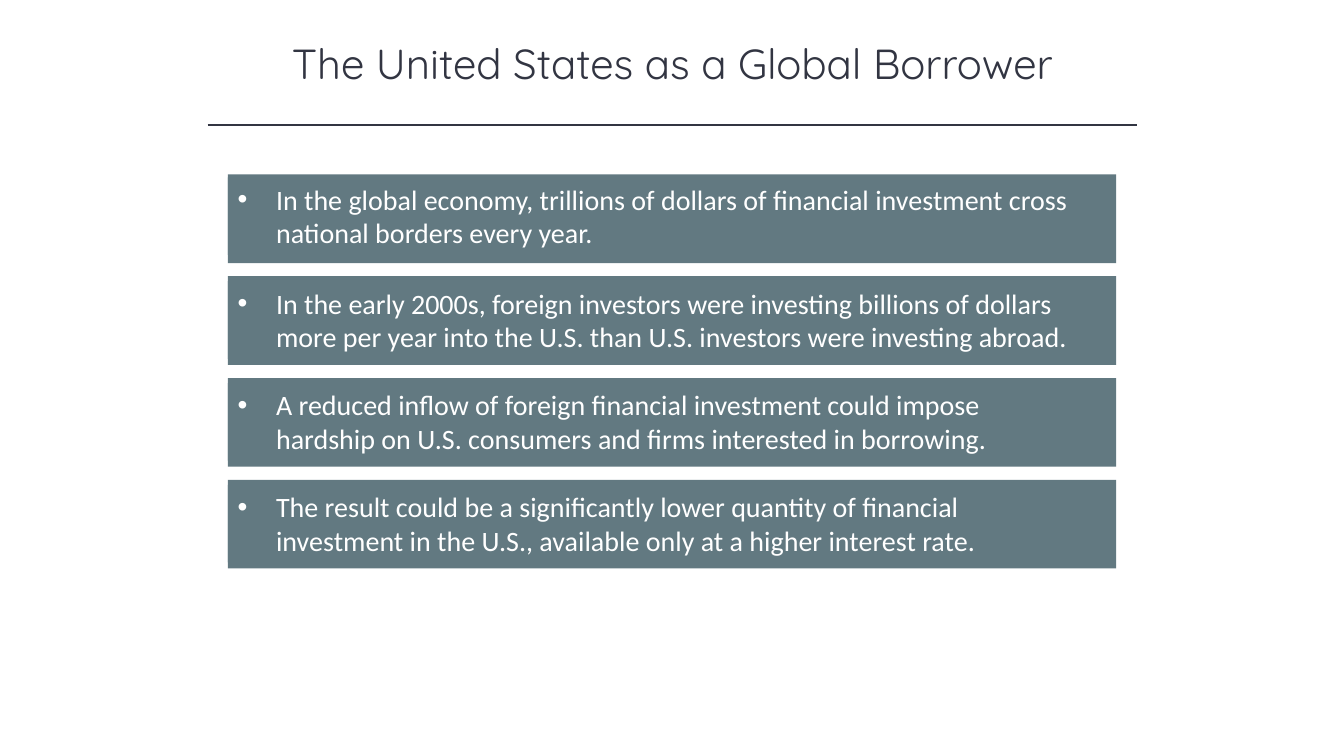
from lxml import etree
from pptx import Presentation
from pptx import util as u
from pptx.dml.color import RGBColor
from pptx.enum import shapes, text
from pptx.oxml.ns import qn

INK = RGBColor(0x32, 0x35, 0x42)
SLATE = RGBColor(0x62, 0x79, 0x81)
WHITE = RGBColor(0xFF, 0xFF, 0xFF)

POINTS = [
    ("In the global economy, trillions of dollars of financial investment "
     "cross national borders every year.", 0.03),
    ("In the early 2000s, foreign investors were investing billions of dollars "
     "more per year into the U.S. than U.S. investors were investing abroad.", 0.05),
    ("A reduced inflow of foreign financial investment could impose hardship "
     "on U.S. consumers and firms interested in borrowing.", 0.05),
    ("The result could be a significantly lower quantity of financial investment "
     "in the U.S., available only at a higher interest rate.", 0.05),
]


def write(frame, wording, font_name, size, color, align):
    frame.word_wrap = True
    frame.auto_size = text.MSO_AUTO_SIZE.SHAPE_TO_FIT_TEXT
    frame.vertical_anchor = text.MSO_ANCHOR.TOP
    paragraph = frame.paragraphs[0]
    paragraph.text = wording
    paragraph.alignment = align
    paragraph.font.name = font_name
    paragraph.font.size = u.Pt(size)
    paragraph.font.color.rgb = color
    return paragraph


def add_bullet(paragraph, indent):
    properties = paragraph._p.get_or_add_pPr()
    properties.set("marL", str(u.Inches(indent)))
    properties.set("indent", str(-u.Inches(indent)))
    etree.SubElement(properties, qn("a:buFont")).set("typeface", "Arial")
    etree.SubElement(properties, qn("a:buChar")).set("char", "•")


def add_block(group, left, top, width, height):
    block = group.shapes.add_shape(
        shapes.MSO_SHAPE.RECTANGLE, *map(u.Inches, (left, top, width, height)))
    block.shadow.inherit = False
    block.fill.solid()
    block.fill.fore_color.rgb = SLATE
    block.line.fill.background()
    return block


def add_heading(slide, left, top, width, height):
    heading = slide.shapes.add_textbox(*map(u.Inches, (left, top, width, 0.61)))
    write(heading.text_frame, "The United States as a Global Borrower",
          "Quicksand", 30, INK, text.PP_ALIGN.CENTER)
    inset, rule_y = 0.39, top + height
    rule = slide.shapes.add_connector(
        shapes.MSO_CONNECTOR.STRAIGHT,
        *map(u.Inches, (left + inset, rule_y, left + width - inset, rule_y)))
    rule.line.color.rgb = INK
    rule.line.width = u.Pt(1)
    etree.SubElement(rule._element.spPr, qn("a:effectLst"))


def add_points(slide, left, top, width, height, gap=0.13):
    panel_height = (height - gap * (len(POINTS) - 1)) / len(POINTS)
    for row, (wording, drop) in enumerate(POINTS):
        panel_top = top + row * (panel_height + gap)
        group = slide.shapes.add_group_shape()
        add_block(group, left, panel_top, width, panel_height)
        statement = add_block(group, left, panel_top + drop, width - 0.27, 0.77)
        paragraph = write(statement.text_frame, wording, "Calibri", 20, WHITE,
                          text.PP_ALIGN.LEFT)
        add_bullet(paragraph, 0.38)


def main():
    deck = Presentation()
    deck.slide_width, deck.slide_height = u.Inches(13.33), u.Inches(7.5)
    slide = deck.slides.add_slide(deck.slide_layouts[6])
    add_heading(slide, 1.67, 0.32, 10, 0.92)
    add_points(slide, 2.26, 1.73, 8.81, 3.91)
    deck.save("out.pptx")


if __name__ == "__main__":
    main()
